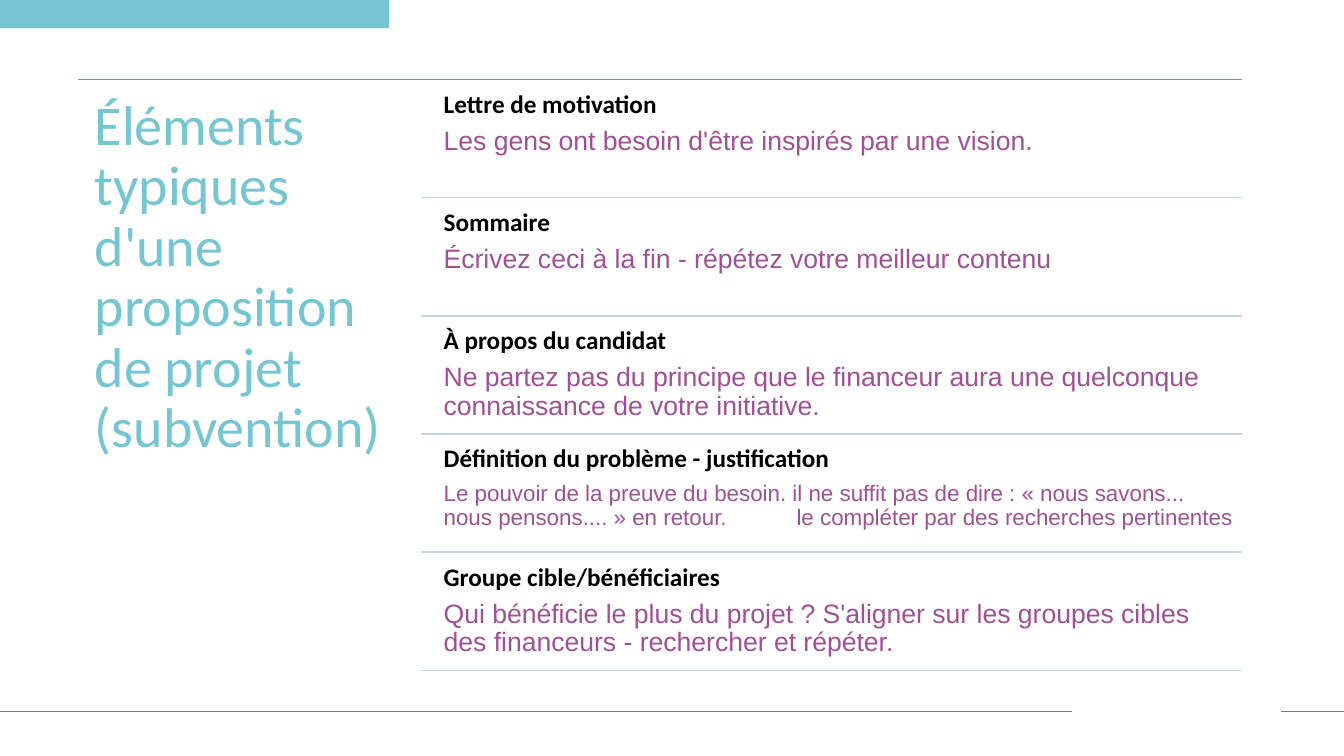
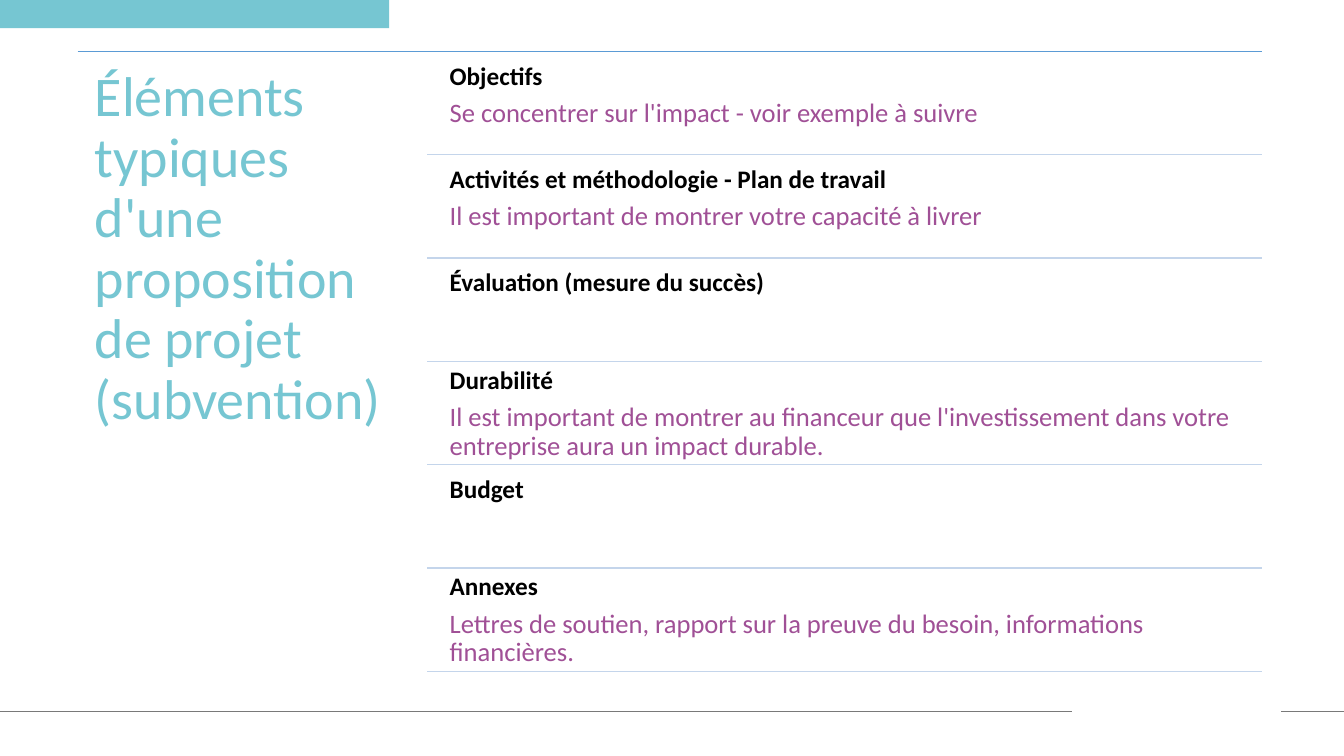
import pptx
import pptx.util
import pptx.dml.color
import pptx.enum.shapes
import pptx.enum.text
import pptx.oxml
from dataclasses import dataclass
from lxml import etree


@dataclass(frozen=True)
class Theme:
    teal: str = "76C6D2"
    blue: str = "5B9BD5"
    pale: str = "C4D5EB"
    gray: str = "797979"
    plum: str = "A05096"
    black: str = "000000"
    sans: str = "Calibri"
    alt: str = "Arial"
    title: int = 40
    head: int = 18
    body: int = 19
    small: int = 16
    rule: float = 1
    thin: float = 0.5
    lead: float = 0.9
    after: float = 0.35


T = Theme()
PX = 9144
WIDE, HIGH = 1333, 750
BAND = (0, 0, 386, 28)
FOOT_Y = 706
FOOT = ((0, 1063), (1271, 1333))
LEFT = 77
PAD = 7
TITLE_PAD = 17
INDENT = 15
DROP = 5
TAB = 350

TITLE = "Éléments typiques d'une proposition de projet (subvention)"

SLIDES = [
    {
        "top": 79, "end": 665, "split": 418, "right": 1232, "font": T.alt,
        "rows": [
            ("Lettre de motivation",
             "Les gens ont besoin d'être inspirés par une vision.", T.body, DROP),
            ("Sommaire",
             "Écrivez ceci à la fin - répétez votre meilleur contenu", T.body, DROP),
            ("À propos du candidat",
             "Ne partez pas du principe que le financeur aura une quelconque "
             "connaissance de votre initiative.", T.body, DROP),
            ("Définition du problème - justification",
             "Le pouvoir de la preuve du besoin. il ne suffit pas de dire : "
             "« nous savons... nous pensons.... » en retour.\t"
             "le compléter par des recherches pertinentes", T.small, DROP),
            ("Groupe cible/bénéficiaires",
             "Qui bénéficie le plus du projet ? S'aligner sur les groupes cibles "
             "des financeurs - rechercher et répéter.", T.body, DROP),
        ],
    },
    {
        "top": 51, "end": 666, "split": 424, "right": 1252, "font": T.sans,
        "rows": [
            ("Objectifs",
             "Se concentrer sur l'impact - voir exemple à suivre", T.body, DROP),
            ("Activités et méthodologie - Plan de travail",
             "Il est important de montrer votre capacité à livrer", T.body, DROP),
            ("Évaluation (mesure du succès)", "", T.body, DROP),
            ("Durabilité",
             "Il est important de montrer au financeur que l'investissement dans "
             "votre entreprise aura un impact durable.", T.body, -1),
            ("Budget", "", T.body, DROP),
            ("Annexes",
             "Lettres de soutien, rapport sur la preuve du besoin, informations "
             "financières.", T.body, -1),
        ],
    },
]


def px(*vals):
    return [pptx.util.Emu(round(v * PX)) for v in vals]


def rgb(code):
    return pptx.dml.color.RGBColor.from_string(code)


def line(slide, x1, x2, y, color, width):
    kind = pptx.enum.shapes.MSO_CONNECTOR.STRAIGHT
    rule = slide.shapes.add_connector(kind, *px(x1, y, x2, y))
    rule.line.color.rgb = rgb(color)
    rule.line.width = pptx.util.Pt(width)
    etree.SubElement(rule._element.spPr, pptx.oxml.ns.qn("a:effectLst"))


def frame(shape, pad):
    tf = shape.text_frame
    tf.word_wrap = True
    tf.auto_size = pptx.enum.text.MSO_AUTO_SIZE.NONE
    tf.vertical_anchor = pptx.enum.text.MSO_ANCHOR.TOP
    edge, = px(pad)
    tf.margin_left = tf.margin_right = edge
    tf.margin_top = tf.margin_bottom = edge
    return tf


def write(para, text, font, size, color, bold=False):
    if "\t" in text:
        tabs = etree.SubElement(para._p.get_or_add_pPr(), pptx.oxml.ns.qn("a:tabLst"))
        stop = etree.SubElement(tabs, pptx.oxml.ns.qn("a:tab"))
        stop.set("pos", str(TAB * PX))
        stop.set("algn", "l")
    para.alignment = pptx.enum.text.PP_ALIGN.LEFT
    para.line_spacing = T.lead
    para.space_before = pptx.util.Pt(0)
    para.space_after = pptx.util.Pt(round(size * T.after, 1))
    run = para.add_run()
    run.text = text
    run.font.name = font
    run.font.size = pptx.util.Pt(size)
    run.font.bold = bold
    run.font.color.rgb = rgb(color)


def base(deck):
    slide = deck.slides.add_slide(deck.slide_layouts[5])
    kind = pptx.enum.shapes.MSO_SHAPE.RECTANGLE
    band = slide.shapes.add_shape(kind, *px(*BAND))
    band.shadow.inherit = False
    band.fill.solid()
    band.fill.fore_color.rgb = rgb(T.teal)
    band.line.fill.background()
    for x1, x2 in FOOT:
        line(slide, x1, x2, FOOT_Y, T.gray, T.thin)
    return slide


def build(deck, data):
    slide = base(deck)
    top, end, split, right = (data[k] for k in ("top", "end", "split", "right"))
    line(slide, LEFT, right, top, T.blue, T.rule)
    title = slide.shapes.title
    title.left, title.top, title.width, title.height = px(
        LEFT, top, split - LEFT, end - top)
    write(frame(title, TITLE_PAD).paragraphs[0], TITLE, T.sans, T.title, T.teal)

    step = (end - top) / len(data["rows"])
    x = split + INDENT
    for i, (head, body, size, drop) in enumerate(data["rows"]):
        y = top + i * step
        box = slide.shapes.add_textbox(*px(x, y + drop, right - x, step - DROP))
        tf = frame(box, PAD)
        write(tf.paragraphs[0], head, T.sans, T.head, T.black, True)
        if body:
            write(tf.add_paragraph(), body, data["font"], size, T.plum)
        line(slide, split, right, y + step, T.pale, T.rule)


def main():
    deck = pptx.Presentation()
    deck.slide_width, deck.slide_height = px(WIDE, HIGH)
    for data in SLIDES:
        build(deck, data)
    deck.save("out.pptx")


if __name__ == "__main__":
    main()
